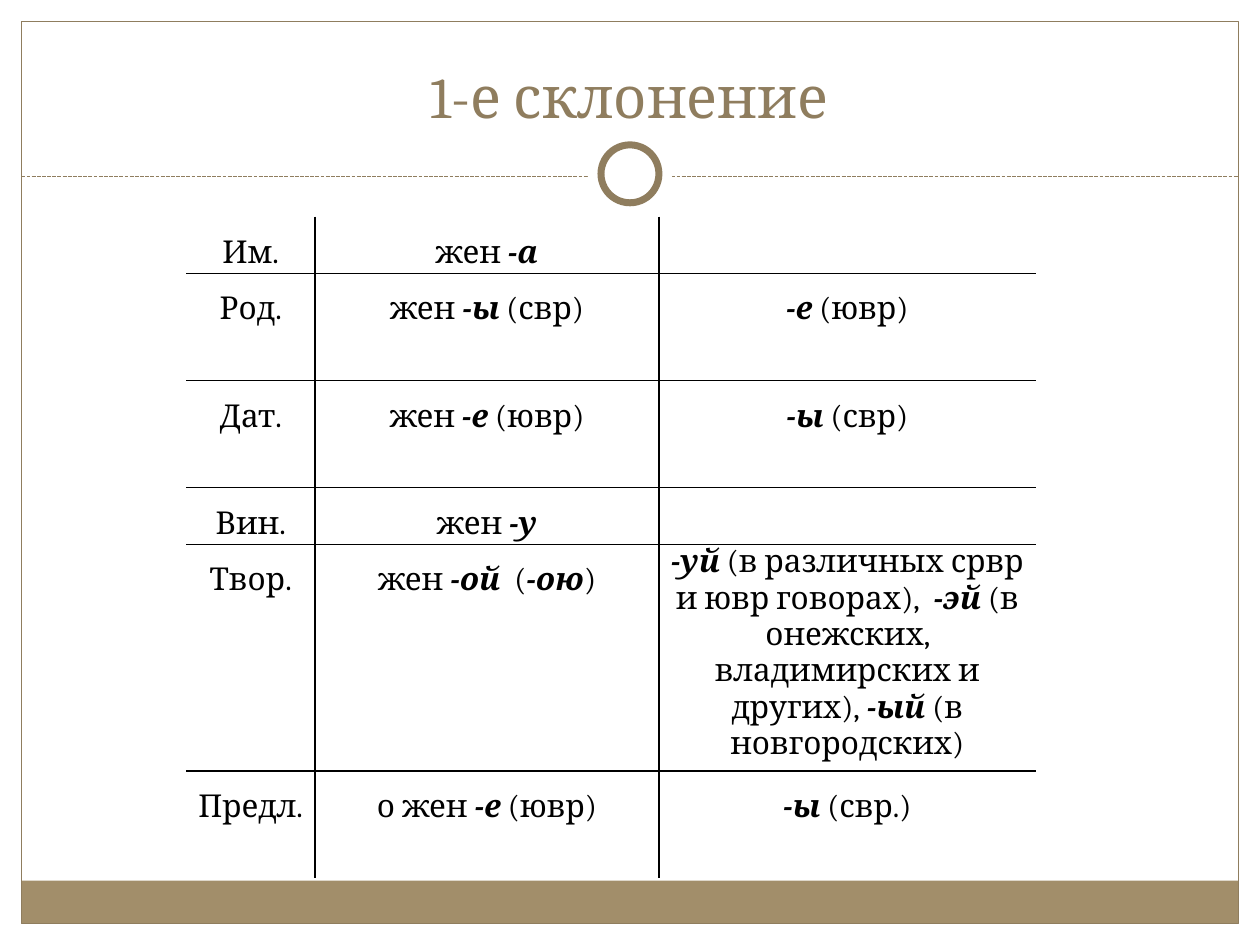
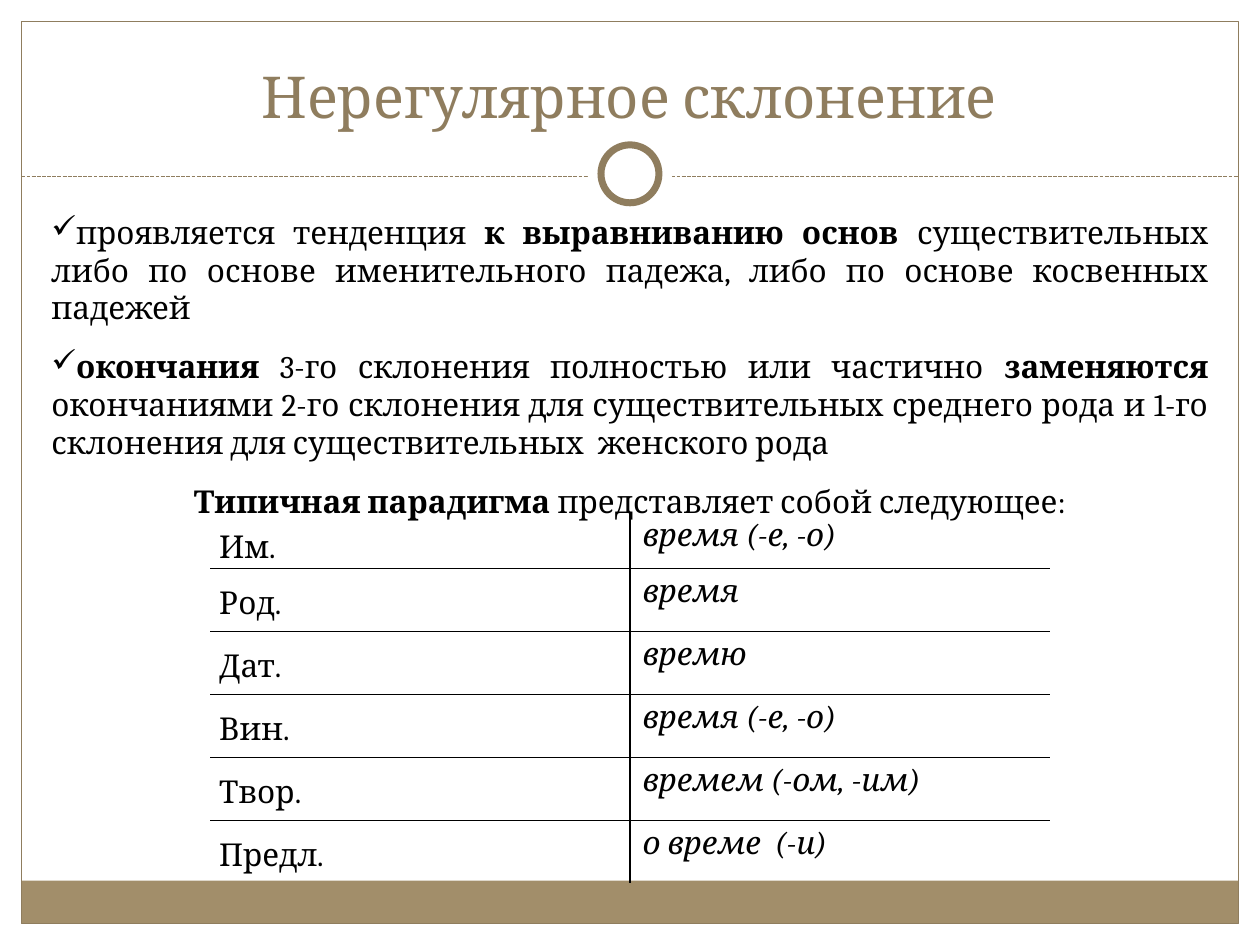
from lxml.etree import Element, SubElement
from pptx import Presentation
from pptx.dml.color import RGBColor
from pptx.enum.dml import MSO_LINE
from pptx.enum.shapes import MSO_CONNECTOR, MSO_SHAPE
from pptx.enum.text import MSO_ANCHOR, MSO_AUTO_SIZE, PP_ALIGN
from pptx.oxml.ns import qn
from pptx.util import Inches, Pt

BLACK, WHITE, BROWN, SAND = "000000", "FFFFFF", "8F7D5E", "A28E6A"
PAGE_WIDTH, PAGE_HEIGHT, EDGE = 10, 7.5, 0.17
TITLE_FONT = {"name": "Cambria", "size": Pt(33)}
BODY_FONT = {"name": "Cambria", "size": Pt(18)}
BOLD = {"bold": True}
ITALIC = {"italic": True}
TIGHT_CELL = {"margin_left": Inches(0.07), "margin_right": Inches(0.07),
              "margin_top": 0, "margin_bottom": 0}
CASES = ["Им.", "Род.", "Дат.", "Вин.", "Твор.", "Предл."]


def colour(code):
    return RGBColor.from_string(code)


def apply(target, values):
    for name, value in values.items():
        setattr(target, name, value)


def write(para, text, emphasis, font=BODY_FONT, shade=BLACK):
    """Fill a paragraph; parts between asterisks get the emphasis."""
    for index, part in enumerate(text.split("*")):
        if part:
            span = para.add_run()
            span.text = part
            apply(span.font, font | (emphasis if index % 2 else {}))
            span.font.color.rgb = colour(shade)


def add_figure(page, kind, box, fill=None, line=None, width=0.75):
    figure = page.shapes.add_shape(kind, *map(Inches, box))
    figure.shadow.inherit = False
    if fill:
        figure.fill.solid()
        figure.fill.fore_color.rgb = colour(fill)
    else:
        figure.fill.background()
    if line:
        figure.line.color.rgb = colour(line)
        figure.line.width = Pt(width)
    else:
        figure.line.fill.background()


def add_circle(page, center_y, size, **style):
    box = ((PAGE_WIDTH - size) / 2, center_y - size / 2, size, size)
    add_figure(page, MSO_SHAPE.OVAL, box, **style)


def add_divider(page, y):
    rule = page.shapes.add_connector(
        MSO_CONNECTOR.STRAIGHT, Inches(EDGE), Inches(y),
        Inches(PAGE_WIDTH - EDGE), Inches(y))
    rule.line.color.rgb = colour(BROWN)
    apply(rule.line, {"width": Pt(0.75), "dash_style": MSO_LINE.SQUARE_DOT})
    SubElement(rule._element.spPr, qn("a:effectLst"))


def add_frame(page):
    """Draw the footer band, border, divider and ring."""
    inner_width = PAGE_WIDTH - 2 * EDGE
    add_figure(page, MSO_SHAPE.RECTANGLE, (EDGE, 6.99, inner_width, 0.34), fill=SAND)
    add_figure(page, MSO_SHAPE.RECTANGLE,
               (EDGE, EDGE, inner_width, PAGE_HEIGHT - 2 * EDGE), line=BROWN)
    add_divider(page, 1.4)
    add_circle(page, 1.38, 0.67, fill=WHITE)
    add_circle(page, 1.38, 0.46, fill=WHITE, line=BROWN, width=4)


def add_page(deck, heading):
    page = deck.slides.add_slide(deck.slide_layouts[5])
    add_frame(page)
    title = page.shapes.title
    apply(title, {"left": Inches(0.33), "top": Inches(0.25),
                  "width": Inches(9.33), "height": Inches(0.83)})
    apply(title.text_frame, {"vertical_anchor": MSO_ANCHOR.BOTTOM, "word_wrap": True,
                             "auto_size": MSO_AUTO_SIZE.NONE})
    para = title.text_frame.paragraphs[0]
    para.alignment = PP_ALIGN.CENTER
    write(para, heading, {}, TITLE_FONT, BROWN)
    return page


def set_borders(cell, visible):
    """Draw the sides named in visible and clear the others."""
    properties = cell._tc.get_or_add_tcPr()
    for index, side in enumerate("LRTB"):
        line = Element(qn(f"a:ln{side}"), w=str(Pt(1)))
        if side in visible:
            fill = SubElement(line, qn("a:solidFill"))
            SubElement(fill, qn("a:srgbClr"), val=BLACK)
        else:
            SubElement(line, qn("a:noFill"))
        properties.insert(index, line)


def add_grid(page, corner, widths, heights, rows):
    """Add a table ruled only between its cells."""
    box = (*corner, sum(widths), sum(heights))
    table = page.shapes.add_table(len(rows), len(widths), *map(Inches, box)).table
    apply(table, {"first_row": False, "horz_banding": False})
    for column, width in zip(table.columns, widths):
        column.width = Inches(width)
    for row, height in zip(table.rows, heights):
        row.height = Inches(height)
    last_row, last_column = len(rows) - 1, len(widths) - 1
    inner_sides = {"L": lambda r, c: c > 0, "R": lambda r, c: c < last_column,
                   "T": lambda r, c: r > 0, "B": lambda r, c: r < last_row}
    for r, row in enumerate(rows):
        for c, text in enumerate(row):
            cell = table.cell(r, c)
            cell.fill.background()
            set_borders(cell, [side for side, test in inner_sides.items() if test(r, c)])
            yield r, c, cell, text


def add_first_declension(page):
    forms = [
        ("жен *-а*", ""),
        ("жен *-ы *(свр)", "*-е* (ювр)"),
        ("жен *-е *(ювр)", "*-ы *(свр)"),
        ("жен *-у*", ""),
        ("жен *-ой  *(*-ою*)",
         "*-уй *(в различных срвр и ювр говорах),*  -эй *"
         "(в онежских, владимирских и других),* -ый *(в новгородских)"),
        ("о жен *-е *(ювр)", "*-ы *(свр.)"),
    ]
    rows = [(case, *pair) for case, pair in zip(CASES, forms)]
    heights = [0.45, 0.85, 0.85, 0.45, 1.8, 0.85]
    for r, c, cell, text in add_grid(page, (1.48, 1.72), [1.02, 2.73, 2.99], heights, rows):
        apply(cell, TIGHT_CELL)
        para = cell.text_frame.paragraphs[0]
        long_note = (r, c) == (4, 2)
        apply(para, {"alignment": PP_ALIGN.CENTER, "line_spacing": 1.0 if long_note else 1.5})
        write(para, text, BOLD | ITALIC)


def add_check_bullet(para):
    properties = para._p.get_or_add_pPr()
    properties.set("marL", "0")
    properties.set("indent", "0")
    SubElement(properties, qn("a:buChar"), char="✓")


def add_tendencies(page):
    box = page.shapes.add_textbox(*map(Inches, (0.31, 1.64, 9.38, 3.25)))
    frame = box.text_frame
    frame.word_wrap = True
    points = [
        ("проявляется тенденция *к выравниванию основ* существительных либо по основе "
         "именительного падежа, либо по основе косвенных падежей", True),
        ("*окончания* 3-го склонения полностью или частично *заменяются* окончаниями "
         "2-го склонения для существительных среднего рода и 1-го склонения для "
         "существительных  женского рода", True),
        ("*Типичная парадигма *представляет собой следующее:", False),
    ]
    for index, (text, checked) in enumerate(points):
        para = frame.add_paragraph() if index else frame.paragraphs[0]
        apply(para, {"alignment": PP_ALIGN.JUSTIFY if checked else PP_ALIGN.CENTER,
                     "space_before": Pt(6 if index else 0), "space_after": Pt(6)})
        if checked:
            add_check_bullet(para)
        write(para, text, BOLD)


def add_irregular_declension(page):
    forms = ["время (-е, -о)", "время", "времю", "время (-е, -о)",
             "времем (-ом, -им)", "о време  (-и)"]
    rows = [(case, f"*{form}*") for case, form in zip(CASES, forms)]
    heights = [0.45] + [0.5] * 5
    for _, c, cell, text in add_grid(page, (1.67, 4.06), [3.33, 3.33], heights, rows):
        para = cell.text_frame.paragraphs[0]
        if c == 0:
            apply(cell, TIGHT_CELL)
            para.line_spacing = 1.5
        write(para, text, ITALIC)


def main():
    deck = Presentation()
    apply(deck, {"slide_width": Inches(PAGE_WIDTH), "slide_height": Inches(PAGE_HEIGHT)})
    add_first_declension(add_page(deck, "1-е склонение"))
    page = add_page(deck, "Нерегулярное склонение")
    add_tendencies(page)
    add_irregular_declension(page)
    deck.save("out.pptx")


if __name__ == "__main__":
    main()
